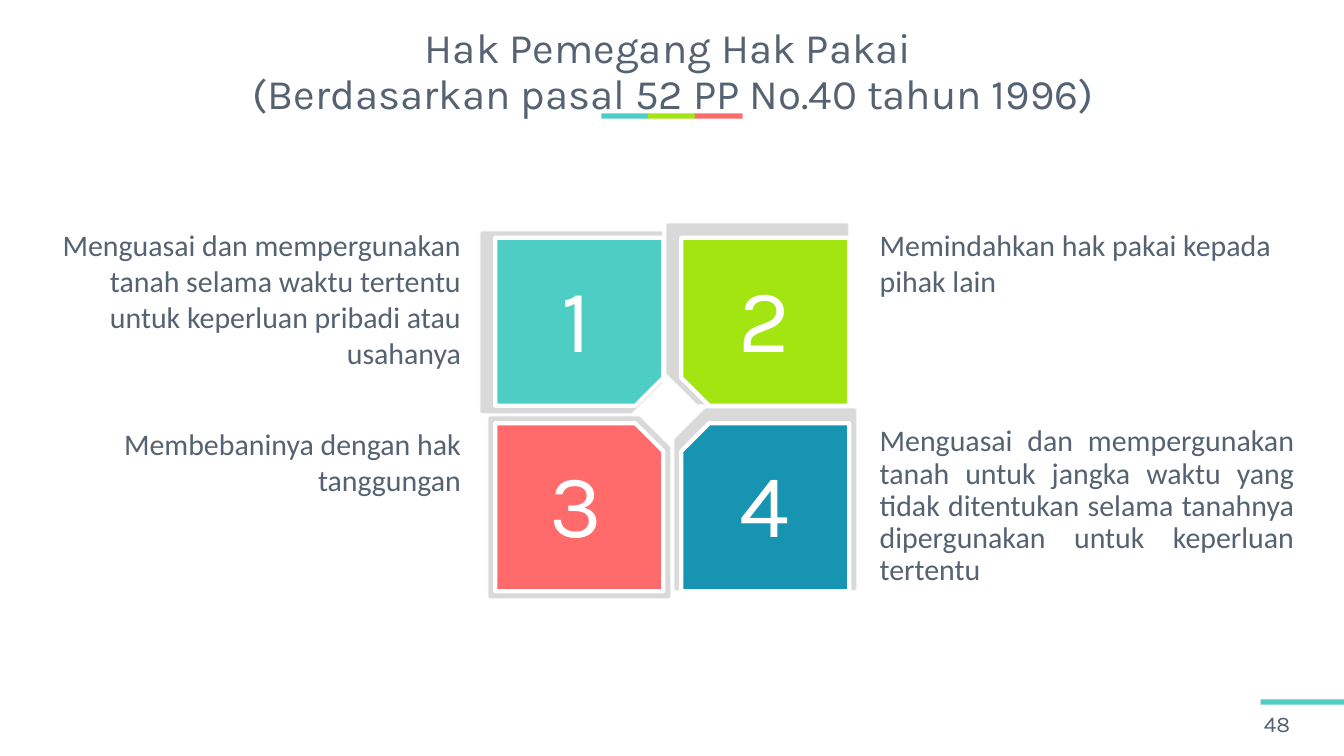
"""Build the slide on the four rights of a Hak Pakai holder."""
from lxml import etree
from pptx import Presentation
from pptx import util as u
from pptx.dml.color import RGBColor
from pptx.enum import shapes, text
from pptx.oxml.ns import qn

COLORS = {
    "teal": "4ECDC4",
    "lime": "A3E511",
    "coral": "FF6B6B",
    "blue": "1694B2",
    "slate": "556272",
    "white": "FFFFFF",
    "black": "000000",
}
ALIGN = text.PP_ALIGN
RIGHTS = [
    ("teal", 90, "Menguasai dan mempergunakan tanah selama waktu tertentu "
     "untuk keperluan pribadi atau usahanya", ALIGN.RIGHT, 1.0),
    ("lime", 180, "Memindahkan hak pakai kepada pihak lain", ALIGN.LEFT, 1.0),
    ("coral", 0, "Membebaninya dengan hak tanggungan", ALIGN.RIGHT, 1.0),
    ("blue", 270, "Menguasai dan mempergunakan tanah untuk jangka waktu yang "
     "tidak ditentukan selama tanahnya dipergunakan untuk keperluan tertentu",
     ALIGN.JUSTIFY, 0.9),
]


def rgb(name):
    """Return the named colour."""
    return RGBColor.from_string(COLORS[name])


def add_block(s, kind, box, color):
    """Add a filled shape without outline or shadow."""
    sp = s.shapes.add_shape(kind, *map(u.Cm, box))
    sp.shadow.inherit = False
    sp.fill.solid()
    sp.fill.fore_color.rgb = rgb(color)
    sp.line.fill.background()
    return sp


def add_halo(sp):
    """Put a faint, slightly larger shadow behind a shape."""
    effects = sp._element.spPr.find(qn("a:effectLst"))
    shadow = etree.SubElement(effects, qn("a:outerShdw"), blurRad="12700", dist="0",
                              sx="105000", sy="105000", algn="ctr", rotWithShape="0")
    color = etree.SubElement(shadow, qn("a:srgbClr"), val=COLORS["black"])
    etree.SubElement(color, qn("a:alpha"), val="15000")


def add_tile(s, left, top, color, rotation):
    """Add a square tile with one snipped corner."""
    sp = add_block(s, shapes.MSO_SHAPE.SNIP_1_RECTANGLE, (left, top, 6.35, 6.35), color)
    sp.rotation = rotation
    sp.line.color.rgb = rgb("white")
    sp.line.width = u.Pt(4.5)
    add_halo(sp)


def add_text(s, box, words, size, font="Karla", color="slate", align=ALIGN.LEFT,
             anchor=text.MSO_ANCHOR.MIDDLE, spacing=1.0):
    """Add a wrapped text box with one formatted paragraph."""
    sp = s.shapes.add_textbox(*map(u.Cm, box))
    tf = sp.text_frame
    tf.word_wrap = True
    tf.vertical_anchor = anchor
    p = tf.paragraphs[0]
    p.text = words
    p.alignment = align
    p.line_spacing = spacing
    for r in p.runs:
        r.font.size = u.Pt(size)
        r.font.name = font
        r.font.color.rgb = rgb(color)
    return sp


def add_note(s, box, words, align, spacing):
    """Add the white panel that explains one right."""
    sp = add_text(s, box, words, 32, "Calibri", align=align,
                  anchor=text.MSO_ANCHOR.TOP, spacing=spacing)
    sp.fill.solid()
    sp.fill.fore_color.rgb = rgb("white")


def main():
    """Build and save the slide."""
    prs = Presentation()
    prs.slide_width, prs.slide_height = u.Cm(50.8), u.Cm(28.58)
    s = prs.slides.add_slide(prs.slide_layouts[6])

    rect = shapes.MSO_SHAPE.RECTANGLE
    for i, color in enumerate(("teal", "lime", "coral")):
        add_block(s, rect, (22.73 + 1.77 * i, 4.29, 1.8, 0.2), color)
    add_block(s, rect, (47.65, 26.44, 3.15, 0.2), "teal")

    add_text(s, (1.37, 0.97, 48.16, 3.56),
             "Hak Pemegang Hak Pakai \v(Berdasarkan pasal 52 PP No.40 tahun 1996)",
             45, align=ALIGN.CENTER, spacing=0.9)
    add_text(s, (47.52, 26.67, 3.28, 1.35), "48", 24)

    for i, (color, rotation, words, align, spacing) in enumerate(RIGHTS):
        row, col = divmod(i, 2)
        add_tile(s, 18.72 + 7.03 * col, 8.99 + 7.01 * row, color, rotation)
        add_text(s, (19.51 + 7.13 * col, 9.6 + 6.99 * row, 4.52, 4.72),
                 str(i + 1), 96, color="white", align=ALIGN.CENTER)
        add_note(s, (1.5 + 31.5 * col, 8.46 + 7.52 * row, 16.18, 6.7),
                 words, align, spacing)

    prs.save("out.pptx")


if __name__ == "__main__":
    main()
